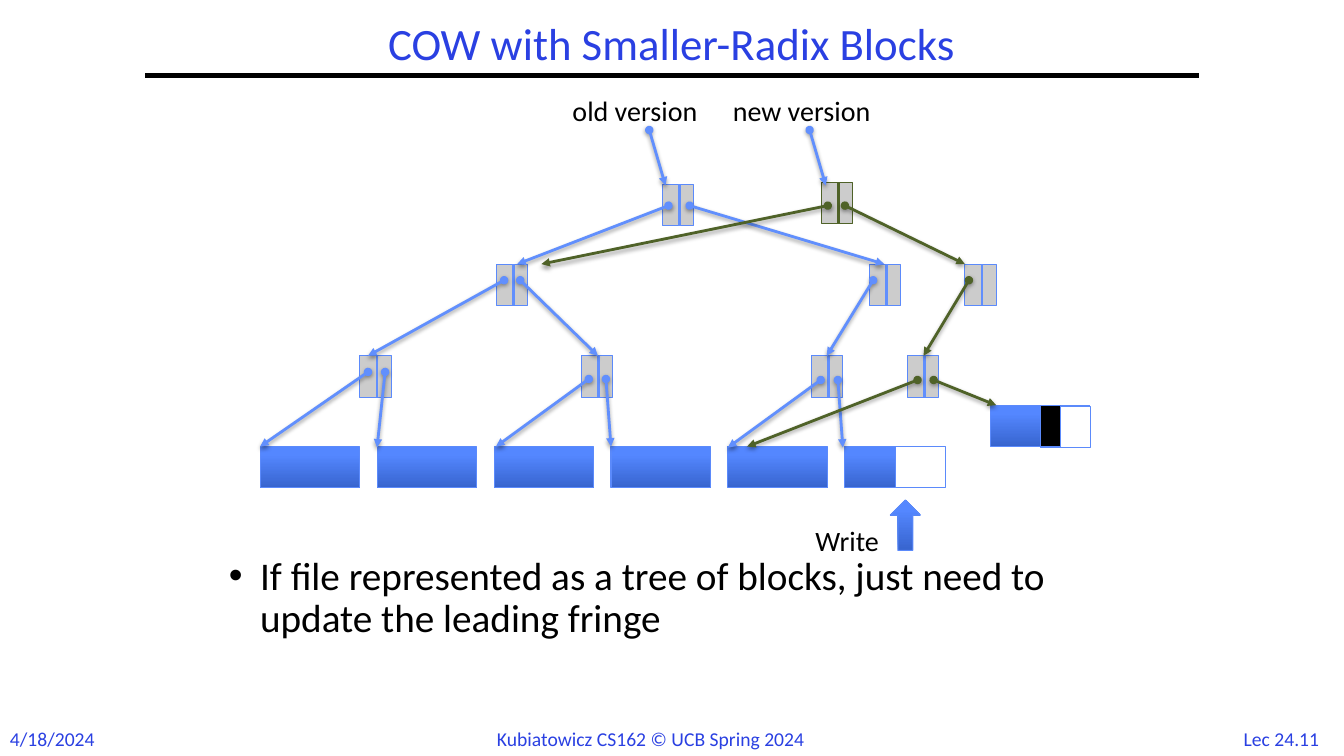
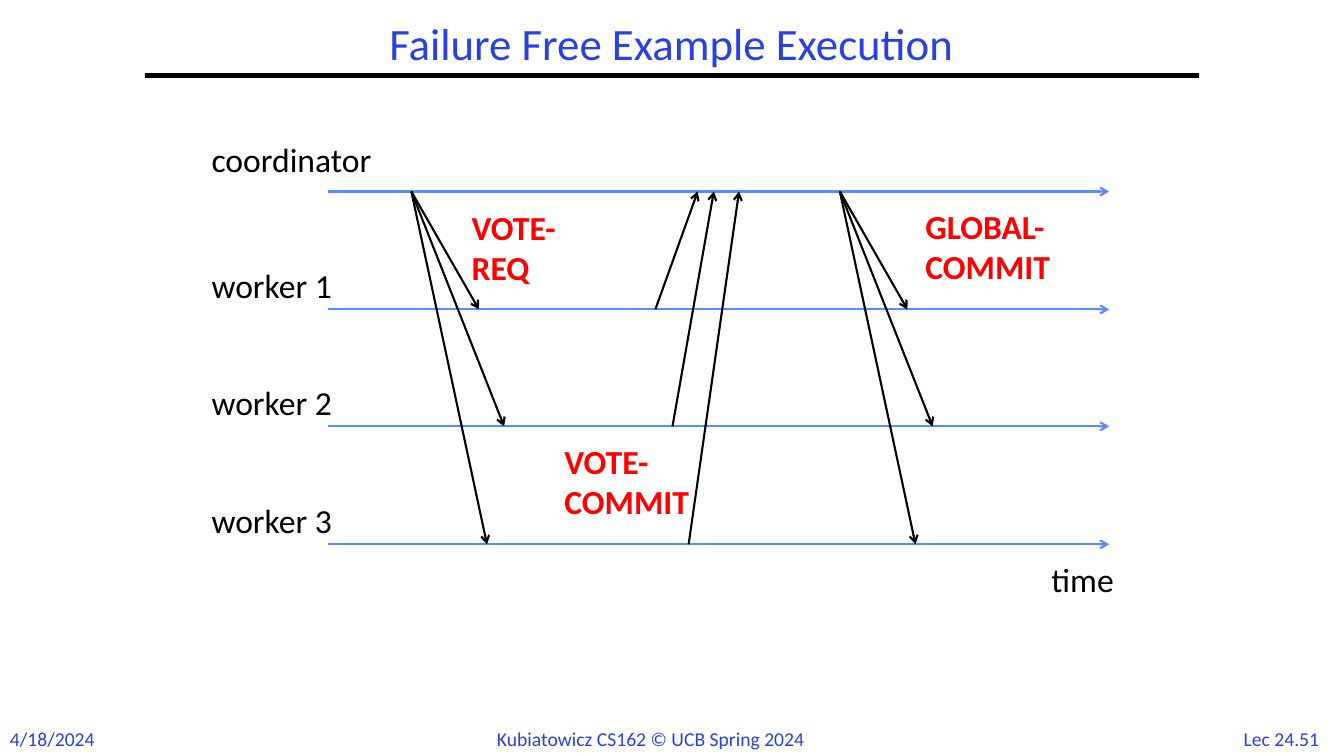
from dataclasses import dataclass

from lxml import etree
from pptx import Presentation
from pptx.dml.color import RGBColor
from pptx.enum.shapes import MSO_CONNECTOR, MSO_SHAPE
from pptx.enum.text import MSO_ANCHOR, MSO_AUTO_SIZE, PP_ALIGN
from pptx.oxml.ns import qn
from pptx.util import Pt

STRAIGHT = MSO_CONNECTOR.STRAIGHT
RECT, UP_ARROW = MSO_SHAPE.RECTANGLE, MSO_SHAPE.UP_ARROW
LEFT, CENTER = PP_ALIGN.LEFT, PP_ALIGN.CENTER
MIDDLE, TOP = MSO_ANCHOR.MIDDLE, MSO_ANCHOR.TOP
GROW, FIXED = MSO_AUTO_SIZE.SHAPE_TO_FIT_TEXT, MSO_AUTO_SIZE.NONE
PX = 9144
TITLE_AND_BODY, TITLE_ONLY = 1, 5


@dataclass(frozen=True)
class Theme:
    """Colours, font and type sizes of the deck."""
    font: str = "Calibri"
    title: str = "2A40E2"
    ink: str = "000000"
    white: str = "FFFFFF"
    red: str = "FF0000"
    edge: str = "5B8AFB"
    pointer: str = "618FFD"
    fresh: str = "4F6228"
    node: str = "CCCCCC"
    data: tuple = ("3764CE", "5487FF")
    title_pt: int = 32
    body_pt: int = 28
    lane_pt: int = 24
    label_pt: int = 20
    footer_pt: int = 14


T = Theme()


def rgb(value):
    """Turn a hex string into a colour."""
    return RGBColor.from_string(value)


def box(*lengths):
    """Turn px lengths into EMU."""
    return [round(n * PX) for n in lengths]


def style(p, size, color, bold=False, align=LEFT):
    """Format a whole paragraph."""
    p.alignment = align
    p.font.name, p.font.size, p.font.bold = T.font, Pt(size), bold
    p.font.color.rgb = rgb(color)


def label(s, text, at, size, color=T.ink, bold=False, wrap=False, align=LEFT):
    """Add a text box with one paragraph."""
    tf = s.shapes.add_textbox(*box(*at)).text_frame
    tf.word_wrap, tf.auto_size = wrap, GROW
    p = tf.paragraphs[0]
    p.text = text
    style(p, size, color, bold, align)


def block(s, at, fill, edge=T.edge, kind=RECT):
    """Add an outlined shape; a pair of colours fills it from bottom to top."""
    sp = s.shapes.add_shape(kind, *box(*at))
    sp.shadow.inherit = False
    if isinstance(fill, tuple):
        sp.fill.gradient()
        sp.fill.gradient_angle = 90
        for stop, color, position in zip(sp.fill.gradient_stops, fill, (0, 0.8)):
            stop.color.rgb, stop.position = rgb(color), position
    else:
        sp.fill.solid()
        sp.fill.fore_color.rgb = rgb(fill)
    sp.line.color.rgb, sp.line.width = rgb(edge), Pt(0.75)


def line(s, start, end, color, width, head=None, tail=None, shadow=False):
    """Add a straight line with optional ends and a soft shadow."""
    sp = s.shapes.add_connector(STRAIGHT, *box(*start, *end))
    sp.line.color.rgb, sp.line.width = rgb(color), Pt(width)
    ln = sp.line._get_or_add_ln()
    for tag, kind in (("a:headEnd", head), ("a:tailEnd", tail)):
        if kind:
            etree.SubElement(ln, qn(tag), type=kind)
    effects = etree.SubElement(ln.getparent(), qn("a:effectLst"))
    if shadow:
        cast = etree.SubElement(effects, qn("a:outerShdw"), blurRad="40000",
                                dist="20000", dir="5400000", rotWithShape="0")
        color_el = etree.SubElement(cast, qn("a:srgbClr"), val=T.ink)
        etree.SubElement(color_el, qn("a:alpha"), val="38000")


def fill_placeholder(ph, text, at, size, color, anchor, align):
    """Move a placeholder and set its text."""
    ph.left, ph.top, ph.width, ph.height = box(*at)
    tf = ph.text_frame
    tf.word_wrap, tf.auto_size, tf.vertical_anchor = True, FIXED, anchor
    p = tf.paragraphs[0]
    p.text, p.line_spacing = text, 0.9
    style(p, size, color, align=align)
    return p


def new_slide(prs, layout, title, number):
    """Add a slide with the shared title, rule and footers."""
    s = prs.slides.add_slide(prs.slide_layouts[layout])
    fill_placeholder(s.shapes.title, title, (144, 17, 1044, 58),
                     T.title_pt, T.title, MIDDLE, CENTER)
    line(s, (144, 75), (1189, 75), T.ink, 3)
    for text, x, w, align in (
            ("4/18/2024", 0, 107, LEFT),
            ("Kubiatowicz CS162 © UCB Spring 2024", 483, 368, LEFT),
            (f"Lec {number}", 1217, 108, CENTER)):
        label(s, text, (x, 716, w, 34), T.footer_pt, T.title, align=align)
    return s


def data_blocks(s, x, y):
    """Draw the row of file blocks, the rewritten block and the write mark."""
    w, h, step, count = 99, 41, 116, 6
    for i in range(count):
        block(s, (x + i * step, y, w, h), T.data)
    block(s, (x + 630, y, 50, h), T.white)
    block(s, (x + 724, y - h, w, h), T.data)
    block(s, (x + 774, y - h + 1, 50, h), T.white)
    block(s, (x + 774, y - h, 20, h), T.ink)
    block(s, (x + 625, y + 53, 30, 50), T.data, kind=UP_ARROW)
    label(s, "Write", (x + 541, y + 71, 93, 44), T.label_pt)


def index_node(s, x, y, edge=T.edge, divider=T.pointer):
    """Draw a two-slot index block."""
    w, h, middle = 31, 41, 17
    block(s, (x, y, w, h), T.node, edge)
    line(s, (x + middle, y), (x + middle, y + h), divider, 2)


def block_tree(s, x, y):
    """Draw the old and new versions of the tree over their shared blocks."""
    data_blocks(s, x, y + 355)
    for nx, ny in ((399, 95), (234, 174), (604, 174), (699, 174),
                   (99, 265), (319, 265), (547, 265), (642, 265)):
        index_node(s, x + nx, y + ny)
    index_node(s, x + 557, y + 93, T.fresh, T.fresh)
    old_links = [
        (405, 116, 255, 174), (426, 116, 619, 174),
        (242, 190, 107, 265), (258, 190, 335, 265), (608, 190, 562, 265),
        (107, 281, 0, 355), (124, 281, 116, 356),
        (326, 288, 234, 355), (343, 288, 348, 355),
        (556, 289, 464, 356), (573, 289, 578, 356)]
    new_links = [
        (703, 190, 658, 265), (652, 289, 483, 355), (668, 289, 730, 314),
        (563, 116, 279, 174), (580, 116, 699, 174)]
    for i, (text, w) in enumerate((("old version", 156), ("new version", 170))):
        dx = i * 159
        label(s, text, (x + 300 + dx, y, w, 44), T.label_pt)
        old_links.append((386 + dx, 41, 402 + dx, 96))
    for links, color in ((old_links, T.pointer), (new_links, T.fresh)):
        for x1, y1, x2, y2 in links:
            line(s, (x + x1, y + y1), (x + x2, y + y2), color, 2,
                 "oval", "triangle", True)


def timelines(s, x, y):
    """Draw the lanes of the commit protocol and the messages between them."""
    lanes = [y + 57 + round(i * 350 / 3) for i in range(4)]
    top, workers = lanes[0], lanes[1:]
    for lane in lanes:
        line(s, (x + 125, lane), (x + 900, lane), T.edge, 1.5, tail="arrow")
    label(s, "coordinator", (x, y, 200, 51), T.lane_pt, wrap=True)
    for i, lane in enumerate(workers, 1):
        label(s, f"worker {i}", (x, lane - 49, 158, 51), T.lane_pt, wrap=True)
    label(s, "time", (x + 833, y + 417, 92, 51), T.lane_pt, wrap=True)

    messages = []
    for sent in (208, 633):
        for lane, delay in zip(workers, (67, 92, 75)):
            messages.append((sent, top, sent + delay, lane))
    for lane, sent, received in zip(workers, (450, 467, 483), (492, 508, 533)):
        messages.append((sent, lane, received, top))
    for x1, y1, x2, y2 in messages:
        line(s, (x + x1, y1), (x + x2, y2), T.ink, 1.5, tail="arrow")
    for text, dx, dy, w in (("VOTE-REQ", 258, 67, 133),
                            ("VOTE-COMMIT", 350, 299, 158),
                            ("GLOBAL-COMMIT", 708, 66, 167)):
        label(s, text, (x + dx, y + dy, w, 91), T.lane_pt, T.red, True, True)


def tree_slide(prs):
    """Build the copy-on-write slide."""
    s = new_slide(prs, TITLE_AND_BODY, "COW with Smaller-Radix Blocks", "24.11")
    p = fill_placeholder(
        s.placeholders[1],
        "If file represented as a tree of blocks, just need to update the leading fringe",
        (217, 547, 900, 143), T.body_pt, T.ink, TOP, LEFT)
    pPr = p._p.get_or_add_pPr()
    indent = 31 * PX
    pPr.set("marL", str(indent))
    pPr.set("indent", str(-indent))
    block_tree(s, 258, 88)


def execution_slide(prs):
    """Build the commit protocol slide."""
    s = new_slide(prs, TITLE_ONLY, "Failure Free Example Execution", "24.51")
    timelines(s, 200, 133)


def main():
    """Build and save the deck."""
    prs = Presentation()
    prs.slide_width, prs.slide_height = box(1333, 750)
    tree_slide(prs)
    execution_slide(prs)
    prs.save("out.pptx")


if __name__ == "__main__":
    main()
